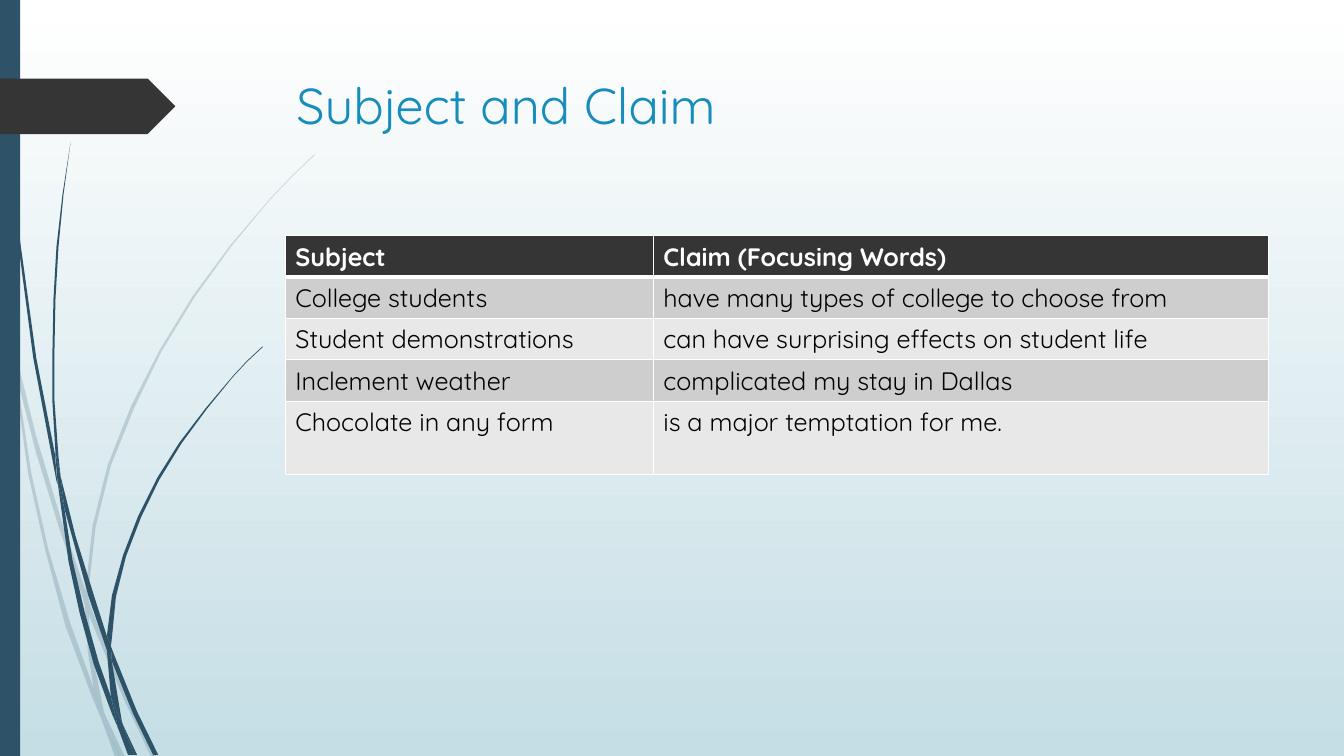
from lxml import etree
from pptx import Presentation
from pptx import util as u
from pptx.dml.color import RGBColor
from pptx.enum import shapes, text
from pptx.oxml import ns

WIDTH, HEIGHT = 13.33, 7.5
LEFT, CONTENT_WIDTH = 2.83, 9.75
COLUMNS = 3.65, 6.1
ROW, LAST_ROW = 0.41, 0.73
FONT = "Quicksand"

WHITE = RGBColor(0xFF, 0xFF, 0xFF)
BLACK = RGBColor(0, 0, 0)
SKY = RGBColor(0xC5, 0xDE, 0xE5)
NAVY = RGBColor(0x2E, 0x53, 0x69)
CHARCOAL = RGBColor(0x35, 0x35, 0x35)
TITLE_BLUE = RGBColor(0x17, 0x8D, 0xBB)
BANDS = RGBColor(0xCE, 0xCE, 0xCE), RGBColor(0xE8, 0xE8, 0xE8)

CLAIMS = [
    ("Subject", "Claim (Focusing Words)"),
    ("College students", "have many types of college to choose from"),
    ("Student demonstrations", "can have surprising effects on student life"),
    ("Inclement weather", "complicated my stay in Dallas"),
    ("Chocolate in any form", "is a major temptation for me."),
]

# Outline corners of each piece of the grass blades, in inches
PALE_GRASS = [
    [(0.11, 3.5), (0.09, 3.22), (0, 2.82), (0, 2.99), (0.1, 3.44)],
    [(0.58, 5.22), (0.84, 5.99), (0.85, 5.86), (0.62, 5.2), (0.36, 4.33),
     (0.14, 3.45), (0.17, 3.76), (0.36, 4.5)],
    [(0.92, 6.07), (0.88, 5.96), (0.88, 6.1), (1.23, 6.94), (1.5, 7.51),
     (1.55, 7.51), (1.27, 6.92)],
    [(1.19, 7.51), (1.24, 7.51), (1.05, 7.11)],
    [(0.93, 6.83), (0.7, 6.19), (0.48, 5.45), (0.31, 4.69), (0.17, 3.76),
     (0.11, 3.5), (0.28, 4.7), (0.45, 5.46), (0.65, 6.21), (0.92, 6.93),
     (1.01, 7.14), (0.99, 7.07)],
    [(0.84, 5.99), (0.87, 6.46), (0.93, 6.83), (0.96, 6.92), (1.05, 7.11),
     (1.03, 7.06), (0.91, 6.46), (0.88, 6.1), (0.88, 6.08)],
    [(0.88, 5.84), (0.95, 5.22), (1.1, 4.62), (1.33, 4.05), (1.6, 3.49),
     (1.93, 2.95), (2.29, 2.45), (2.68, 1.98), (2.9, 1.75), (3.12, 1.54),
     (3.12, 1.53), (2.89, 1.75), (2.68, 1.97), (2.28, 2.44), (1.91, 2.94),
     (1.58, 3.48), (1.3, 4.03), (1.07, 4.61), (0.92, 5.21), (0.85, 5.84),
     (0.85, 5.86), (0.88, 5.96)],
    [(1.01, 7.14), (1.14, 7.51), (1.19, 7.51)],
    [(0.88, 6.08), (0.88, 6.1), (0.88, 5.96), (0.85, 5.86), (0.84, 5.99)],
    [(0.96, 6.92), (0.93, 6.83), (0.99, 7.07), (1.01, 7.14), (1.19, 7.51),
     (1.05, 7.11)],
]
DARK_GRASS = [
    [(0.07, 1.1), (0.17, 2.33), (0.33, 3.55), (0.56, 4.77), (0.57, 4.81),
     (0.55, 4.57), (0.55, 4.53), (0.36, 3.55), (0.19, 2.32), (0.08, 1.09),
     (0.05, 0.48), (0.04, 0), (0.03, 0), (0.04, 0.48)],
    [(0.88, 5.92), (1.06, 6.45), (1.06, 6.33), (1.06, 6.31), (0.93, 5.9),
     (0.75, 5.32), (0.6, 4.72), (0.64, 5.05)],
    [(1.13, 6.49), (1.1, 6.41), (1.11, 6.56), (1.32, 7.08), (1.52, 7.49),
     (1.57, 7.49), (1.36, 7.06)],
    [(1.1, 6.91), (0.98, 6.57), (0.84, 6.07), (0.72, 5.56), (0.64, 5.05),
     (0.57, 4.77), (0.68, 5.57), (0.79, 6.08), (0.93, 6.59), (1.11, 7.08),
     (1.17, 7.22), (1.16, 7.17)],
    [(0.6, 4.72), (0.58, 4.53), (0.54, 3.97), (0.54, 3.49), (0.55, 2.97),
     (0.58, 2.45), (0.63, 1.93), (0.7, 1.41), (0.62, 1.93), (0.56, 2.45),
     (0.53, 2.97), (0.52, 3.49), (0.52, 3.99), (0.55, 4.49)],
    [(1.33, 7.49), (1.36, 7.49), (1.22, 7.19)],
    [(0.57, 4.77), (0.64, 5.05), (0.6, 4.72), (0.55, 4.49), (0.55, 4.53)],
    [(1.11, 6.33), (1.15, 5.92), (1.25, 5.52), (1.4, 5.13), (1.58, 4.76),
     (1.8, 4.4), (2.05, 4.06), (2.31, 3.74), (2.45, 3.59), (2.61, 3.44),
     (2.6, 3.44), (2.45, 3.58), (2.31, 3.73), (2.04, 4.05), (1.78, 4.39),
     (1.56, 4.74), (1.37, 5.12), (1.22, 5.51), (1.11, 5.91), (1.06, 6.31),
     (1.1, 6.41)],
    [(1.17, 7.22), (1.27, 7.49), (1.31, 7.49)],
    [(1.06, 6.45), (1.1, 6.91), (1.16, 7.06), (1.22, 7.19), (1.21, 7.16),
     (1.11, 6.56), (1.09, 6.51)],
    [(1.06, 6.45), (1.09, 6.51), (1.11, 6.56), (1.1, 6.41), (1.06, 6.31),
     (1.06, 6.33)],
    [(1.16, 7.06), (1.1, 6.91), (1.16, 7.17), (1.17, 7.22), (1.3, 7.49),
     (1.33, 7.49), (1.22, 7.19)],
]


def apply(target, **values):
    for name, value in values.items():
        setattr(target, name, value)


def paint(shape, color, opacity=100):
    shape.shadow.inherit = False
    shape.line.fill.background()
    shape.fill.solid()
    shape.fill.fore_color.rgb = color
    if opacity < 100:
        tint = shape.fill._xPr.find(".//" + ns.qn("a:srgbClr"))
        etree.SubElement(tint, ns.qn("a:alpha")).set("val", str(opacity * 1000))


def add_grass(slide, pieces, opacity):
    for piece in pieces:
        corners = [(u.Inches(x), u.Inches(y)) for x, y in piece]
        builder = slide.shapes.build_freeform(*corners[0])
        builder.add_line_segments(corners[1:], close=True)
        paint(builder.convert_to_shape(), NAVY, opacity)


def add_block(slide, kind, color, *place):
    paint(slide.shapes.add_shape(kind, *map(u.Inches, place)), color)


def write(frame, words, color, **font):
    span = frame.paragraphs[0].add_run()
    span.text = words
    apply(span.font, name=FONT, **font)
    span.font.color.rgb = color


def add_title(slide, words):
    box = slide.shapes.add_textbox(*map(u.Inches, (LEFT + 0.01, 0.69, CONTENT_WIDTH, 3.85)))
    apply(box.text_frame, word_wrap=True, vertical_anchor=text.MSO_ANCHOR.TOP)
    write(box.text_frame, words, TITLE_BLUE, size=u.Pt(36))


def add_borders(cell, **widths):
    properties = cell._tc.get_or_add_tcPr()
    for index, (side, points) in enumerate(widths.items()):
        line = etree.Element(ns.qn("a:ln" + side), w=str(u.Pt(points)))
        fill = etree.SubElement(line, ns.qn("a:solidFill"))
        etree.SubElement(fill, ns.qn("a:srgbClr")).set("val", str(WHITE))
        properties.insert(index, line)


def add_claim_table(slide):
    heights = [ROW] * (len(CLAIMS) - 1) + [LAST_ROW]
    place = LEFT, 2.34, CONTENT_WIDTH, sum(heights)
    table = slide.shapes.add_table(len(CLAIMS), 2, *map(u.Inches, place)).table
    for column, width in zip(table.columns, COLUMNS):
        column.width = u.Inches(width)
    for index, (height, words) in enumerate(zip(heights, CLAIMS)):
        table.rows[index].height = u.Inches(height)
        header = index == 0
        for cell, phrase in zip(table.rows[index].cells, words):
            cell.fill.solid()
            cell.fill.fore_color.rgb = CHARCOAL if header else BANDS[(index - 1) % 2]
            write(cell.text_frame, phrase, WHITE if header else BLACK,
                  size=u.Pt(18), bold=header)
            add_borders(cell, L=1, R=1, T=3 if index == 1 else 1, B=3 if header else 1)


def add_background(slide):
    fill = slide.background.fill
    fill.gradient()
    fill.gradient_angle = 270
    for stop, color in zip(fill.gradient_stops, (WHITE, SKY)):
        stop.color.rgb = color


def main():
    deck = Presentation()
    apply(deck, slide_width=u.Inches(WIDTH), slide_height=u.Inches(HEIGHT))
    page = deck.slides.add_slide(deck.slide_layouts[6])
    add_background(page)
    add_grass(page, PALE_GRASS, 20)
    add_grass(page, DARK_GRASS, 100)
    add_block(page, shapes.MSO_SHAPE.RECTANGLE, NAVY, 0, 0, 0.2, HEIGHT)
    add_block(page, shapes.MSO_SHAPE.PENTAGON, CHARCOAL, 0, 0.78, 1.74, 0.55)
    add_title(page, "Subject and Claim")
    add_claim_table(page)
    deck.save("out.pptx")


if __name__ == "__main__":
    main()
